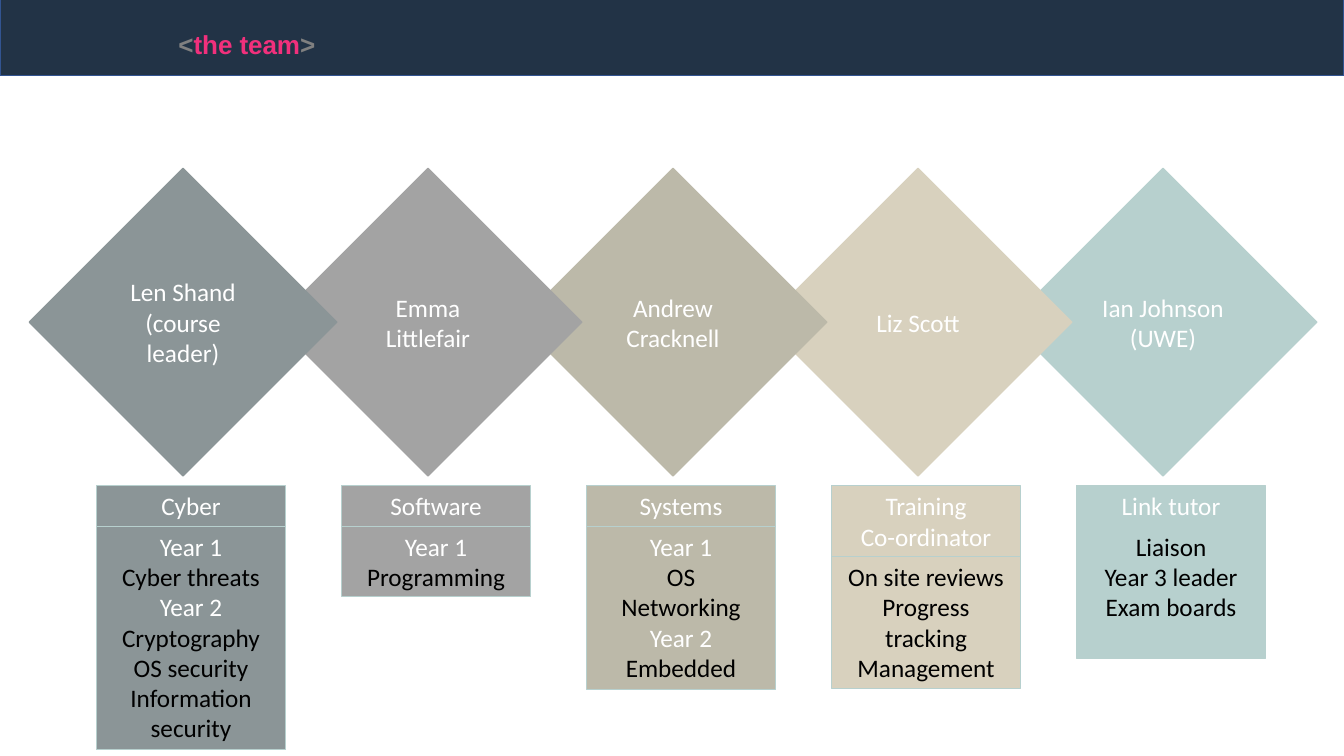
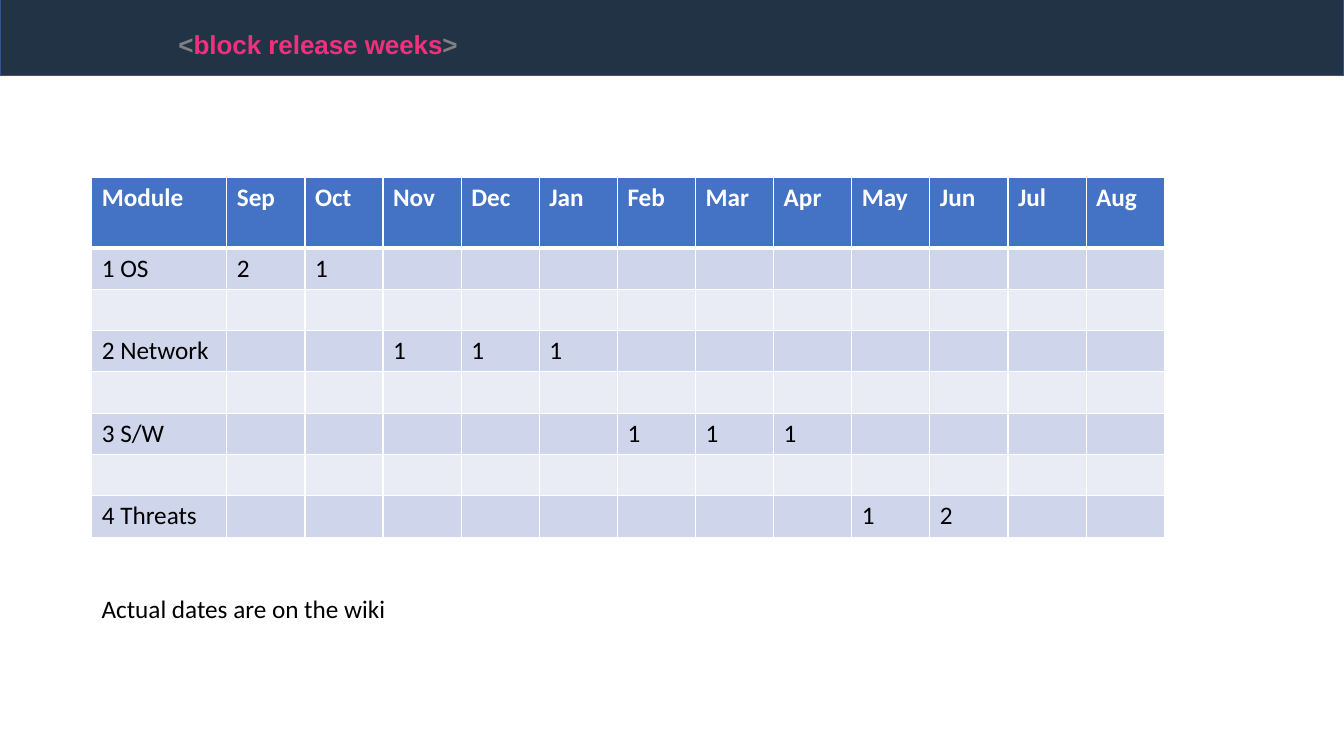
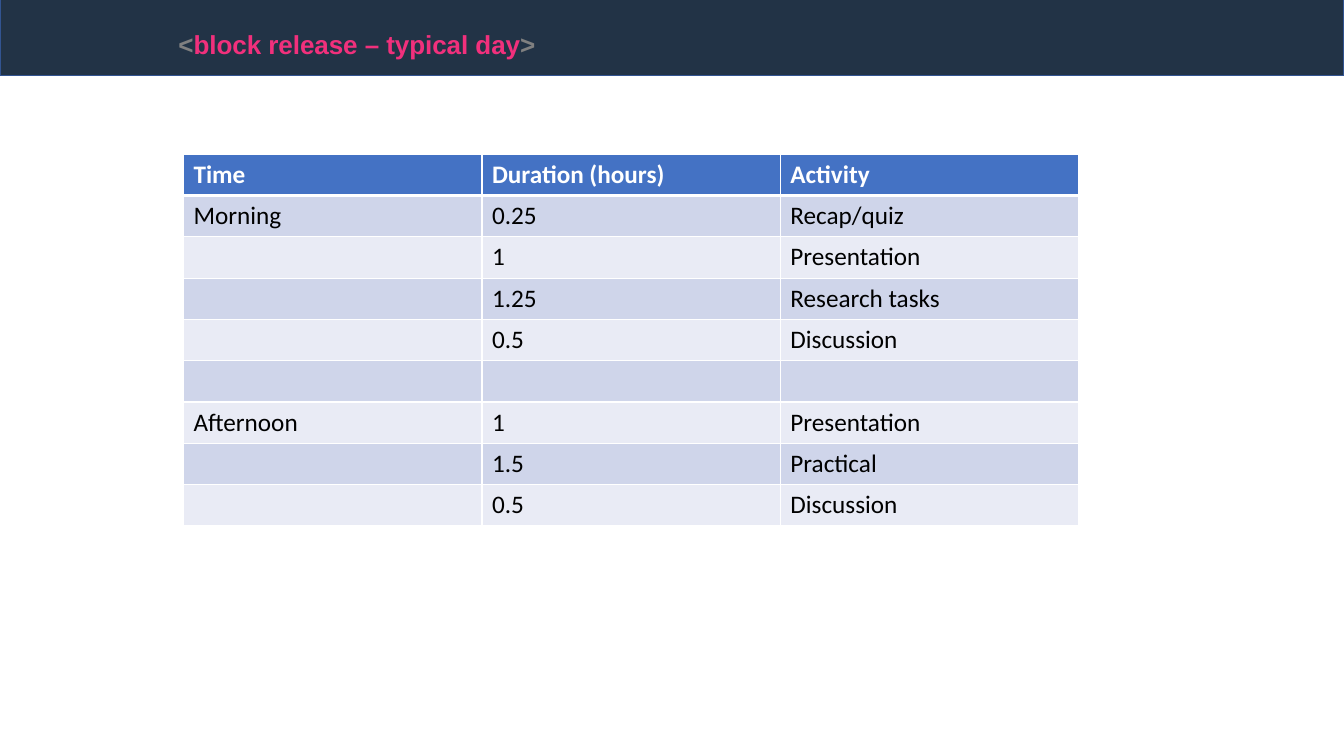
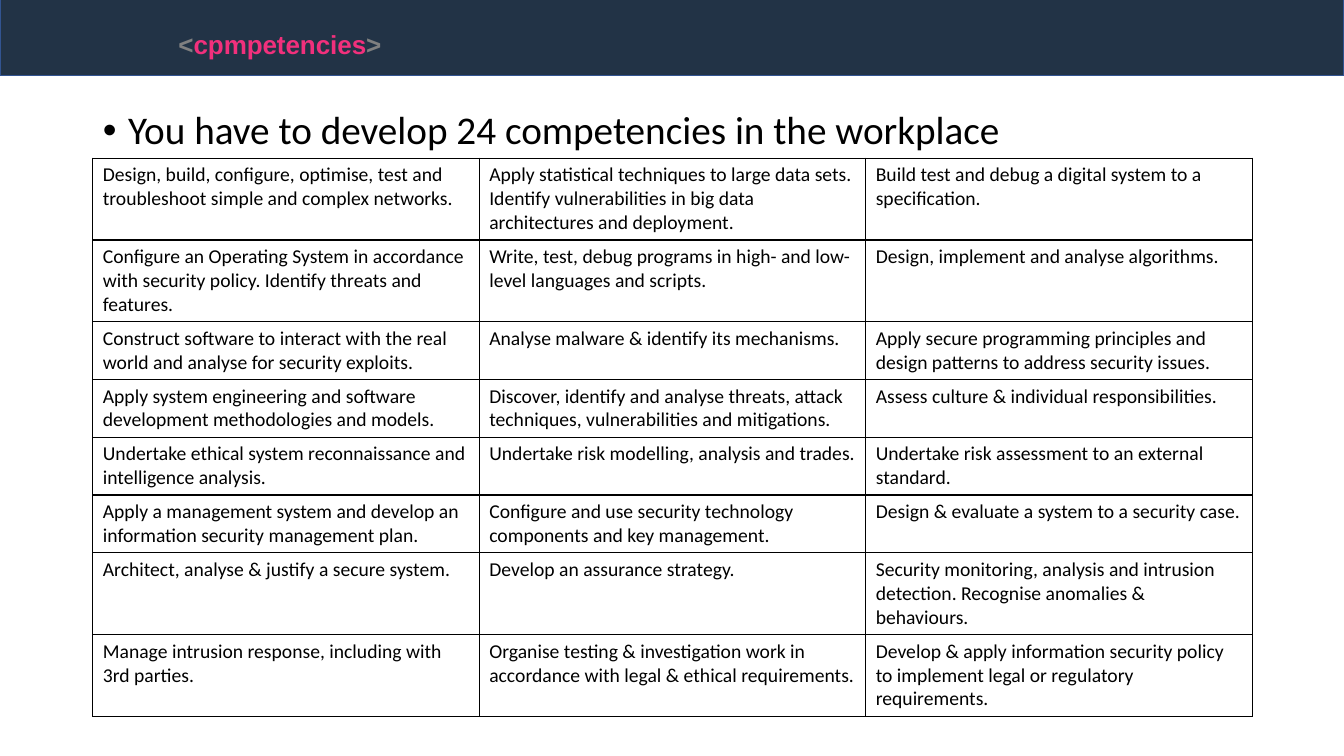
from lxml import etree
from pptx import Presentation
from pptx import util as u
from pptx.dml import color
from pptx.enum import shapes, text
from pptx.oxml import ns

HUES = {
    "navy": "223346", "edge": "325491", "pink": "F1307C", "grey": "808080",
    "white": "FFFFFF", "black": "000000", "head": "4472C4",
    "odd": "CFD5EA", "even": "E9EBF5", "slate": "8B9597", "ash": "A3A3A3",
    "moss": "BCB9A9", "sand": "D8D1BE", "mint": "B7D0CE",
}

TEAM = [
    ("slate", ["Len Shand", "(course leader)"], ["Cyber"],
     ["Year 1", "Cyber threats", "Year 2", "Cryptography", "OS security",
      "Information security"], 2.22),
    ("ash", ["Emma Littlefair"], ["Software"], ["Year 1", "Programming"], 0.7),
    ("moss", ["Andrew Cracknell"], ["Systems"],
     ["Year 1", "OS", "Networking", "Year 2", "Embedded"], 1.62),
    ("sand", ["Liz Scott"], ["Training", "Co-ordinator"],
     ["On site reviews", "Progress tracking", "Management"], 1.31),
    ("mint", ["Ian Johnson", "(UWE)"], ["Link tutor"],
     ["Liaison", "Year 3 leader", "Exam boards"], 1.31),
]

MONTHS = ["Sep", "Oct", "Nov", "Dec", "Jan", "Feb",
          "Mar", "Apr", "May", "Jun", "Jul", "Aug"]

WEEKS = {
    "1 OS": {"Sep": "2", "Oct": "1"},
    "2 Network": {"Nov": "1", "Dec": "1", "Jan": "1"},
    "3 S/W": {"Feb": "1", "Mar": "1", "Apr": "1"},
    "4 Threats": {"May": "1", "Jun": "2"},
}

DAY = [
    ["Time", "Duration (hours)", "Activity"],
    ["Morning", "0.25", "Recap/quiz"],
    ["", "1", "Presentation"],
    ["", "1.25", "Research tasks"],
    ["", "0.5", "Discussion"],
    ["", "", ""],
    ["Afternoon", "1", "Presentation"],
    ["", "1.5", "Practical"],
    ["", "0.5", "Discussion"],
]

SKILLS = [
    ["Design, build, configure, optimise, test and troubleshoot simple and complex networks.",
     "Apply statistical techniques to large data sets. Identify vulnerabilities in big data architectures and deployment.",
     "Build test and debug a digital system to a specification."],
    ["Configure an Operating System in accordance with security policy. Identify threats and features.",
     "Write, test, debug programs in high- and low-level languages and scripts.",
     "Design, implement and analyse algorithms."],
    ["Construct software to interact with the real world and analyse for security exploits.",
     "Analyse malware & identify its mechanisms.",
     "Apply secure programming principles and design patterns to address security issues."],
    ["Apply system engineering and software development methodologies and models.",
     "Discover, identify and analyse threats, attack techniques, vulnerabilities and mitigations.",
     "Assess culture & individual responsibilities."],
    ["Undertake ethical system reconnaissance and intelligence analysis.",
     "Undertake risk modelling, analysis and trades.",
     "Undertake risk assessment to an external standard."],
    ["Apply a management system and develop an information security management plan.",
     "Configure and use security technology components and key management.",
     "Design & evaluate a system to a security case."],
    ["Architect, analyse & justify a secure system.",
     "Develop an assurance strategy.",
     "Security monitoring, analysis and intrusion detection. Recognise anomalies & behaviours."],
    ["Manage intrusion response, including with 3rd parties.",
     "Organise testing & investigation work in accordance with legal & ethical requirements.",
     "Develop & apply information security policy to implement legal or regulatory requirements."],
]


def rgb(hue):
    return color.RGBColor.from_string(HUES[hue])


def apply(item, **style):
    for key, value in style.items():
        setattr(item, key, value)


def place(item, *spot):
    apply(item, **dict(zip(("left", "top", "width", "height"), map(u.Inches, spot))))


def write(para, words, hue, size=18, font="Calibri", bold=False):
    run = para.add_run()
    run.text = words
    apply(run.font, name=font, size=u.Pt(size), bold=bold)
    run.font.color.rgb = rgb(hue)
    return run


def add_block(slide, kind, spot, fill, line, width):
    block = slide.shapes.add_shape(kind, *map(u.Inches, spot))
    block.shadow.inherit = False
    block.fill.solid()
    block.fill.fore_color.rgb = rgb(fill)
    block.line.color.rgb = rgb(line)
    block.line.width = u.Pt(width)
    return block


def add_label(block, lines, hue, anchor):
    frame = block.text_frame
    apply(frame, word_wrap=True, vertical_anchor=anchor)
    for i, words in enumerate(lines):
        para = frame.add_paragraph() if i else frame.paragraphs[0]
        para.alignment = text.PP_ALIGN.CENTER
        write(para, words, "white" if words in ("Year 1", "Year 2") else hue)


def add_band(deck, slide):
    band = add_block(slide, shapes.MSO_SHAPE.RECTANGLE, (0, -0.03, 13.33, 0.78),
                     "navy", "edge", 1)
    deck.slide_master.shapes.element.insert(2, band.element)


def add_slide(deck, words, width, layout=5):
    slide = deck.slides.add_slide(deck.slide_layouts[layout])
    title = slide.shapes.title
    place(title, 1.67, 0.18, width, 0.64)
    frame = title.text_frame
    apply(frame, word_wrap=False, auto_size=text.MSO_AUTO_SIZE.SHAPE_TO_FIT_TEXT,
          vertical_anchor=text.MSO_ANCHOR.TOP)
    para = frame.paragraphs[0]
    para.alignment = text.PP_ALIGN.LEFT
    for part, hue in (("<", "grey"), (words, "pink"), (">", "grey")):
        run = write(para, part, hue, 32, "Arial", True)
        run._r.get_or_add_rPr().set("baseline", "30000")
    return slide


def add_edges(cell, hue, widths):
    props = cell._tc.get_or_add_tcPr()
    for i, (side, width) in enumerate(zip("LRTB", widths)):
        line = etree.Element(ns.qn(f"a:ln{side}"), w=str(u.Pt(width)))
        fill = etree.SubElement(line, ns.qn("a:solidFill"))
        etree.SubElement(fill, ns.qn("a:srgbClr"), val=HUES[hue])
        props.insert(i, line)


def add_grid(slide, spot, rows, cols, highs, size=18, plain=False):
    frame = slide.shapes.add_table(len(rows), len(cols),
                                   *map(u.Inches, (*spot, sum(cols), sum(highs))))
    table = frame.table
    apply(table, first_row=not plain, horz_banding=not plain)
    for col, width in zip(table.columns, cols):
        col.width = u.Inches(width)
    for r, (row, high) in enumerate(zip(rows, highs)):
        table.rows[r].height = u.Inches(high)
        top = not plain and r == 0
        for c, words in enumerate(row):
            cell = table.cell(r, c)
            if plain:
                cell.fill.background()
                add_edges(cell, "black", (1, 1, 1, 1))
            else:
                cell.fill.solid()
                cell.fill.fore_color.rgb = rgb("head" if top else "odd" if r % 2 else "even")
                add_edges(cell, "white", (1, 1, 3 if r == 1 else 1, 3 if top else 1))
            if words:
                write(cell.text_frame.paragraphs[0], words,
                      "white" if top else "black", size, bold=top)


def add_team(slide):
    step = 2.43
    for i, (hue, name, role, tasks, high) in reversed(list(enumerate(TEAM))):
        left = 0.96 + i * step
        head = 0.1 + 0.3 * len(role)
        box = shapes.MSO_SHAPE.RECTANGLE
        role_box = add_block(slide, box, (left, 4.82, 1.87, head), hue, "mint", 0.75)
        add_label(role_box, role, "white", text.MSO_ANCHOR.TOP)
        task_box = add_block(slide, box, (left, 4.82 + head, 1.87, high), hue, "mint", 0.75)
        add_label(task_box, tasks, "black", text.MSO_ANCHOR.TOP)
        gem = add_block(slide, shapes.MSO_SHAPE.DIAMOND,
                        (0.29 + i * step, 1.67, 3.05, 3.05), hue, hue, 1)
        add_label(gem, name, "white", text.MSO_ANCHOR.MIDDLE)


def add_weeks(slide):
    rows = [["Module", *MONTHS]]
    for name, counts in WEEKS.items():
        if len(rows) > 1:
            rows.append([""] * len(rows[0]))
        rows.append([name, *(counts.get(month, "") for month in MONTHS)])
    cols = [1.34] + [9.3 / len(MONTHS)] * len(MONTHS)
    add_grid(slide, (0.91, 1.76), rows, cols, [0.7] + [0.41] * (len(rows) - 1))
    note = slide.shapes.add_textbox(*map(u.Inches, (0.91, 5.84, 4.83, 0.4)))
    note.text_frame.word_wrap = True
    write(note.text_frame.paragraphs[0], "Actual dates are on the wiki", "black")


def add_skills(slide):
    body = slide.placeholders[1]
    place(body, 0.92, 1.05, 11.5, 6.07)
    body.text_frame.auto_size = text.MSO_AUTO_SIZE.NONE
    para = body.text_frame.paragraphs[0]
    props = para._p.get_or_add_pPr()
    apply(para, line_spacing=0.9, space_before=u.Pt(0))
    for key, value in (("marL", 0.25), ("indent", -0.25)):
        props.set(key, str(u.Inches(value)))
    etree.SubElement(props, ns.qn("a:buFont"), typeface="Arial")
    etree.SubElement(props, ns.qn("a:buChar"), char="•")
    write(para, "You have to develop 24 competencies in the workplace", "black", 28)
    tall, short = [0.8] * 2, [0.57] * 4
    add_grid(slide, (0.92, 1.57), SKILLS, [11.5 / 3] * 3, tall + short + tall, 14, True)


def main():
    deck = Presentation()
    apply(deck, slide_width=u.Inches(13.33), slide_height=u.Inches(7.5))
    team = add_slide(deck, "the team", 1.63)
    add_band(deck, team)
    add_team(team)
    add_weeks(add_slide(deck, "block release weeks", 2.98))
    day = add_slide(deck, "block release – typical day", 3.75)
    add_grid(day, (1.82, 1.53), DAY, [2.96] * 3, [0.41] * len(DAY))
    add_skills(add_slide(deck, "cpmpetencies", 2.22, 1))
    deck.save("out.pptx")


if __name__ == "__main__":
    main()
